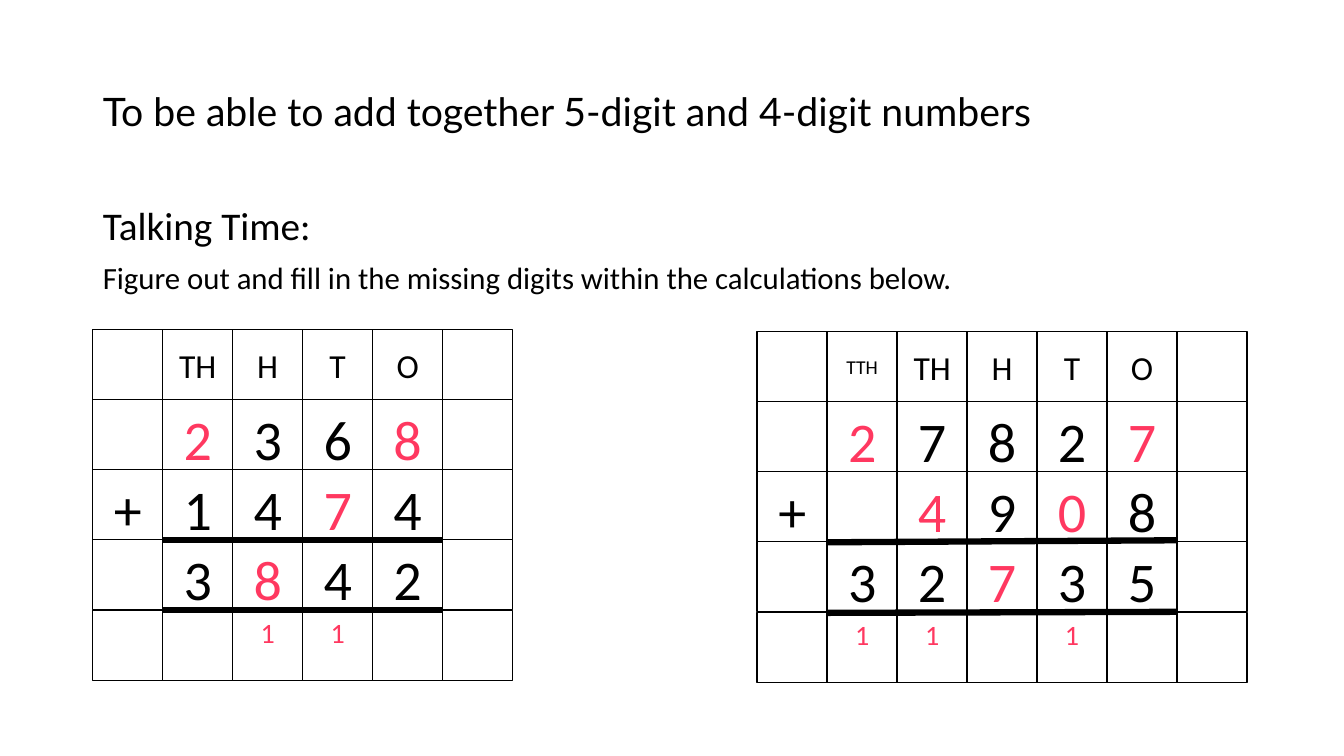
from pptx import Presentation
from pptx.dml.color import RGBColor
from pptx.enum.shapes import MSO_CONNECTOR, MSO_SHAPE
from pptx.enum.text import MSO_ANCHOR, MSO_AUTO_SIZE, PP_ALIGN
from pptx.oxml.ns import qn
from pptx.util import Inches, Pt
from lxml import etree

COLORS = {"ink": "000000", "paper": "FFFFFF", "answer": "FF3860"}
CELL = 3.47 / 5
CARRY_GAP = 0.01
HEADER_ROW, CARRY_ROW = 0, 4


def color(name):
    return RGBColor.from_string(COLORS[name])


def add_text(paragraph, text, size, font="Calibri", ink="ink"):
    run = paragraph.add_run()
    run.text = text
    run.font.name = font
    run.font.size = Pt(size)
    run.font.color.rgb = color(ink)


presentation = Presentation()
presentation.slide_width = Inches(13.33)
presentation.slide_height = Inches(7.5)
slide = presentation.slides.add_slide(presentation.slide_layouts[1])

# Title and instructions
title = slide.shapes.title
title.left, title.top = Inches(0.92), Inches(0.4)
title.width, title.height = Inches(9.6), Inches(1.45)
title.text_frame.auto_size = MSO_AUTO_SIZE.NONE
title.text_frame.vertical_anchor = MSO_ANCHOR.MIDDLE
paragraph = title.text_frame.paragraphs[0]
paragraph.alignment = PP_ALIGN.LEFT
paragraph.line_spacing = 0.9
add_text(paragraph, "To be able to add together 5-digit and 4-digit numbers", 28, "Lato")

body = slide.placeholders[1]
body.left, body.top = Inches(0.92), Inches(2)
body.width, body.height = Inches(11.5), Inches(4.76)
body.text_frame.auto_size = MSO_AUTO_SIZE.NONE
instructions = [
    ("Talking Time:", 28, 0),
    ("Figure out and fill in the missing digits within the calculations below.", 22, 10),
]
for index, (text, size, space_before) in enumerate(instructions):
    paragraph = body.text_frame.paragraphs[0] if index == 0 else body.text_frame.add_paragraph()
    properties = paragraph._p.get_or_add_pPr()
    properties.set("marL", "0")
    properties.set("indent", "0")
    etree.SubElement(properties, qn("a:buNone"))
    paragraph.line_spacing = 0.9
    paragraph.space_before = Pt(space_before)
    add_text(paragraph, text, size)

# Column additions: left, top, rows of cells, missing digits as (row, column),
# and sum lines as (start, end) offsets from the top
additions = [
    (0.92, 3.27,
     [["", "TH", "H", "T", "O", ""], " 2368 ", "+1474 ", " 3842 ", "  11  "],
     {(1, 1), (1, 4), (2, 3), (3, 2)},
     [(2.78, 2.78), (2.09, 2.09)]),
    (7.51, 3.29,
     [["", "TTH", "TH", "H", "T", "O", ""], " 27827 ", "+ 4908 ", " 32735 ", " 11 1  "],
     {(1, 1), (1, 5), (2, 2), (2, 4), (3, 3)},
     [(2.79, 2.78), (2.09, 2.07)]),
]
for left, top, rows, missing, sum_lines in additions:
    for row, cells in enumerate(rows):
        cell_top = top + row * CELL + (CARRY_GAP if row == CARRY_ROW else 0)
        for column, text in enumerate(cells):
            cell = slide.shapes.add_shape(
                MSO_SHAPE.RECTANGLE, Inches(left + column * CELL), Inches(cell_top),
                Inches(CELL), Inches(CELL))
            cell.shadow.inherit = False
            cell.fill.solid()
            cell.fill.fore_color.rgb = color("paper")
            cell.line.color.rgb = color("ink")
            cell.line.width = Pt(1)
            if not text.strip():
                continue
            size = 40
            if row == HEADER_ROW:
                size = 14 if text == "TTH" else 24
            elif row == CARRY_ROW:
                size = 20
            is_answer = row == CARRY_ROW or (row, column) in missing
            cell.text_frame.vertical_anchor = (
                MSO_ANCHOR.MIDDLE if row == HEADER_ROW else MSO_ANCHOR.TOP)
            paragraph = cell.text_frame.paragraphs[0]
            paragraph.alignment = PP_ALIGN.CENTER
            add_text(paragraph, text, size, ink="answer" if is_answer else "ink")

    line_end = left + (len(rows[0]) - 1) * CELL
    for start_offset, end_offset in sum_lines:
        sum_line = slide.shapes.add_connector(
            MSO_CONNECTOR.STRAIGHT, Inches(left + CELL), Inches(top + start_offset),
            Inches(line_end), Inches(top + end_offset))
        sum_line.line.color.rgb = color("ink")
        sum_line.line.width = Pt(4.5)
        etree.SubElement(sum_line._element.spPr, qn("a:effectLst"))

presentation.save("out.pptx")
